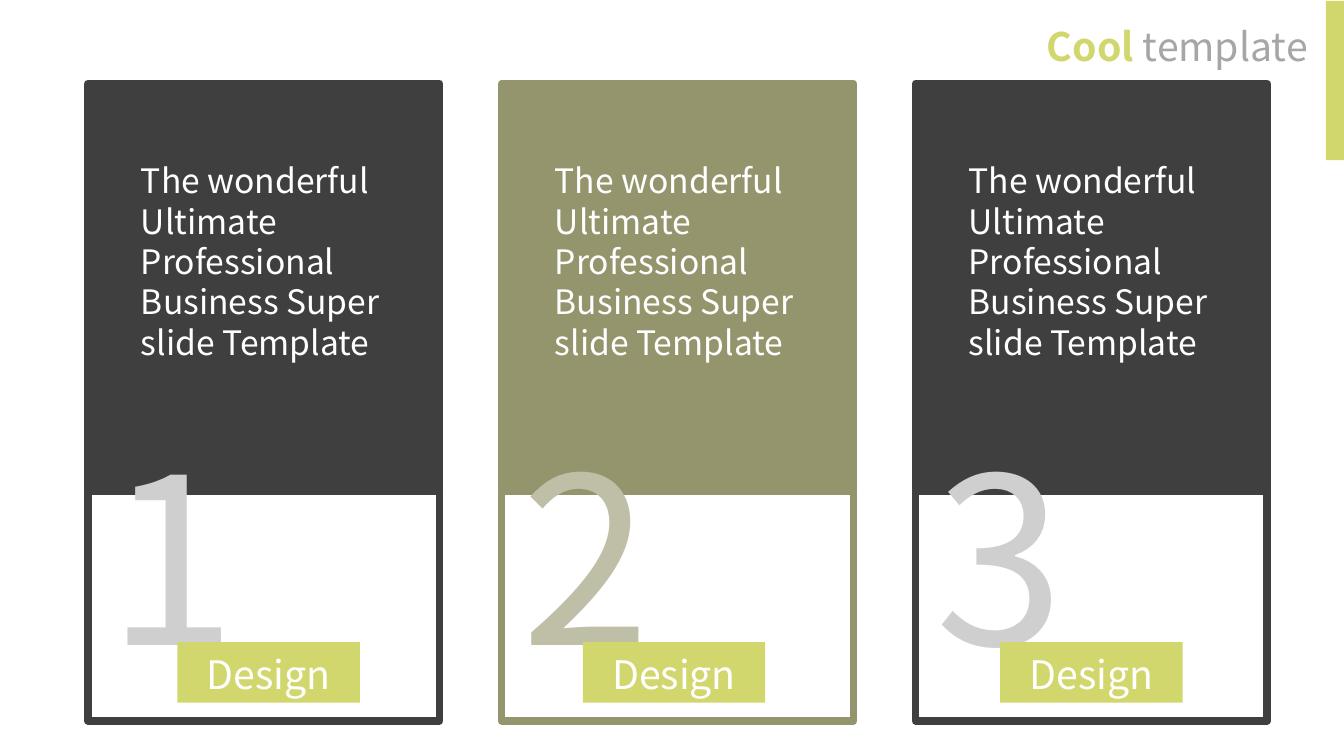
from dataclasses import dataclass

from pptx import Presentation
from pptx.dml.color import RGBColor
from pptx.enum.shapes import MSO_SHAPE as Shape
from pptx.enum.text import MSO_ANCHOR as Anchor, MSO_AUTO_SIZE as Fit, PP_ALIGN as Align
from pptx.util import Inches, Pt


@dataclass(frozen=True)
class Theme:
    font: str = "Noto Sans CJK JP"
    dark: str = "3E3F3E"
    olive: str = "95956D"
    lime: str = "D2D76D"
    white: str = "FFFFFF"
    silver: str = "CECFCE"
    sand: str = "BFBFA7"
    gray: str = "A6A6A6"
    body: int = 24
    head: int = 28
    digit: int = 166
    border: float = 5.5


THEME = Theme()
BLURB = "The wonderful Ultimate Professional Business Super slide Template"
LEFT, PITCH = 0.87, 4.105
# Panel colour, digit colour, left edge of the tag
CARDS = [
    (THEME.dark, THEME.silver, 1.76),
    (THEME.olive, THEME.sand, 5.78),
    (THEME.dark, THEME.silver, 9.92),
]


def rgb(color):
    return RGBColor.from_string(color)


def style(font, size, color, bold=False):
    font.name = THEME.font
    font.size = Pt(size)
    font.bold = bold
    font.color.rgb = rgb(color)


def add_rect(slide, box, fill, line=None):
    rect = slide.shapes.add_shape(Shape.RECTANGLE, *map(Inches, box))
    rect.shadow.inherit = False
    rect.fill.solid()
    rect.fill.fore_color.rgb = rgb(fill)
    if line:
        rect.line.color.rgb = rgb(line)
        rect.line.width = Pt(THEME.border)
    else:
        rect.line.fill.background()
    return rect


def add_text(slide, box, text, size, color, wrap):
    frame = slide.shapes.add_textbox(*map(Inches, box)).text_frame
    frame.word_wrap = wrap
    frame.auto_size = Fit.SHAPE_TO_FIT_TEXT
    frame.text = text
    style(frame.paragraphs[0].font, size, color)


def add_tag(slide, left, text):
    frame = add_rect(slide, (left, 6.37, 1.81, 0.6), THEME.lime).text_frame
    frame.margin_top = Inches(0.08)
    frame.word_wrap = True
    frame.vertical_anchor = Anchor.TOP
    frame.text = text
    para = frame.paragraphs[0]
    para.alignment = Align.CENTER
    style(para.font, THEME.head, THEME.white)


def add_card(slide, index, color, tint, tag):
    left = LEFT + index * PITCH
    add_rect(slide, (left, 0.83, 3.49, 4.02), color, color)
    add_rect(slide, (left, 4.87, 3.49, 2.28), THEME.white, color)
    add_text(slide, (left + 0.1, 4.05, 1.65, 2.89), str(index + 1),
             THEME.digit, tint, False)
    add_text(slide, (left + 0.43, 1.54, 2.64, 2.52), BLURB,
             THEME.body, THEME.white, True)
    add_tag(slide, tag, "Design")


def set_title(slide):
    title = slide.shapes.title
    title.left, title.top = Inches(10.14), Inches(0.17)
    title.width, title.height = Inches(2.93), Inches(0.57)
    frame = title.text_frame
    frame.word_wrap = False
    frame.auto_size = Fit.SHAPE_TO_FIT_TEXT
    frame.vertical_anchor = Anchor.TOP
    para = frame.paragraphs[0]
    para.alignment = Align.RIGHT
    for text, color, bold in [("Cool ", THEME.lime, True), ("template", THEME.gray, False)]:
        run = para.add_run()
        run.text = text
        style(run.font, THEME.head, color, bold)


def main():
    deck = Presentation()
    deck.slide_width, deck.slide_height = Inches(13.33), Inches(7.5)
    slide = deck.slides.add_slide(deck.slide_layouts.get_by_name("Title Only"))
    set_title(slide)
    for index, card in enumerate(CARDS):
        add_card(slide, index, *card)
    add_rect(slide, (13.15, 0.01, 0.18, 1.58), THEME.lime)
    deck.save("out.pptx")


if __name__ == "__main__":
    main()
